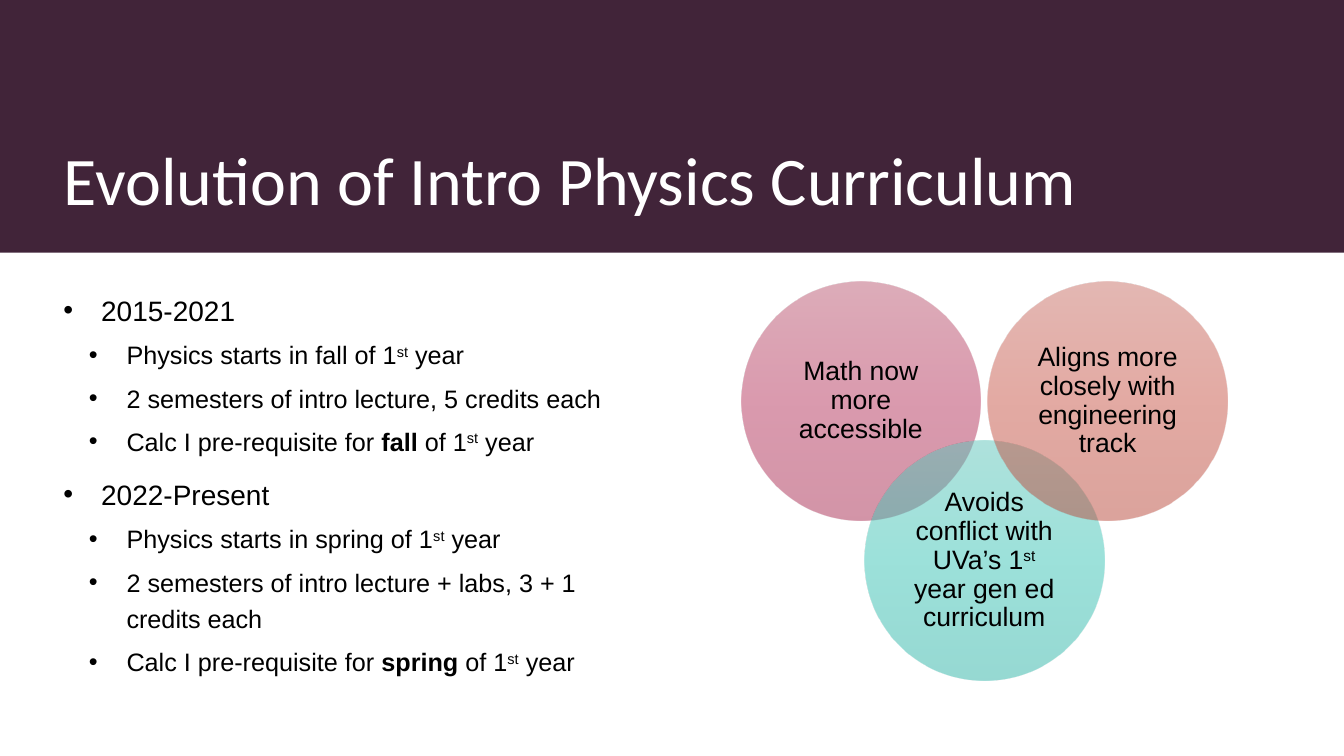
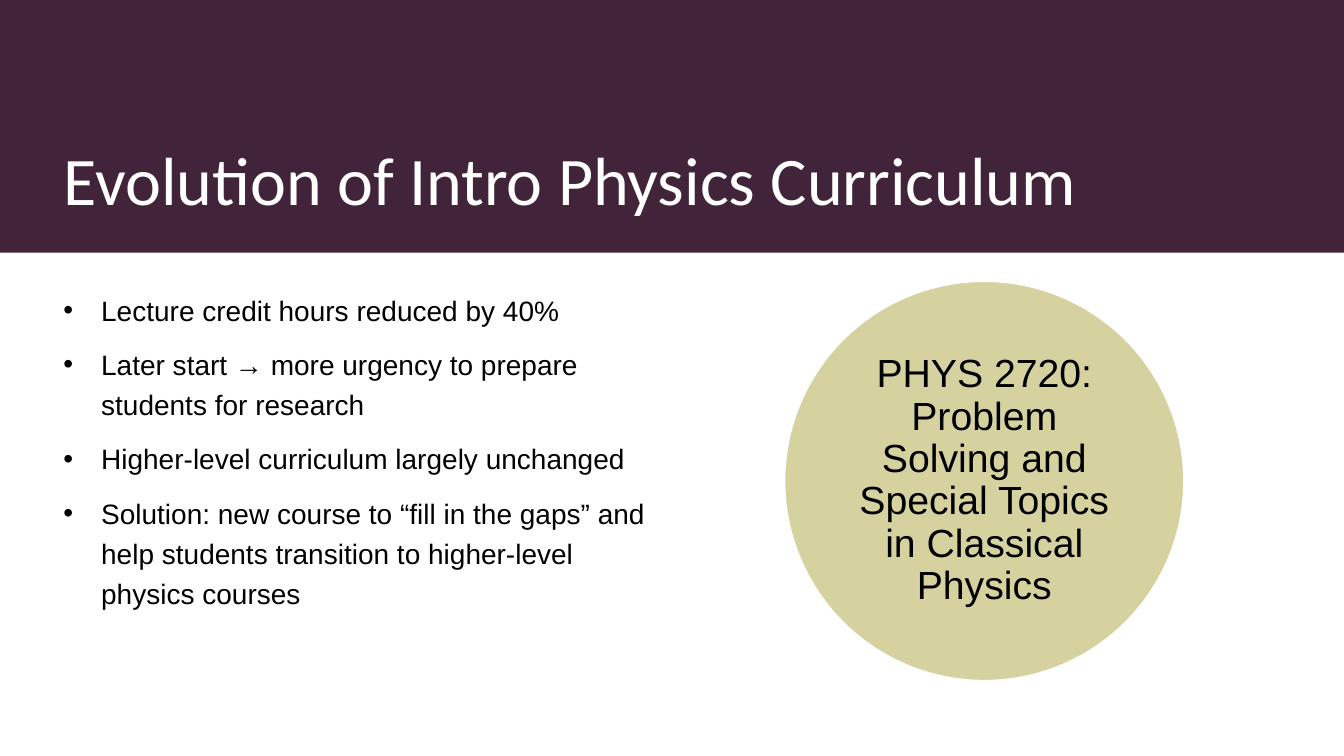
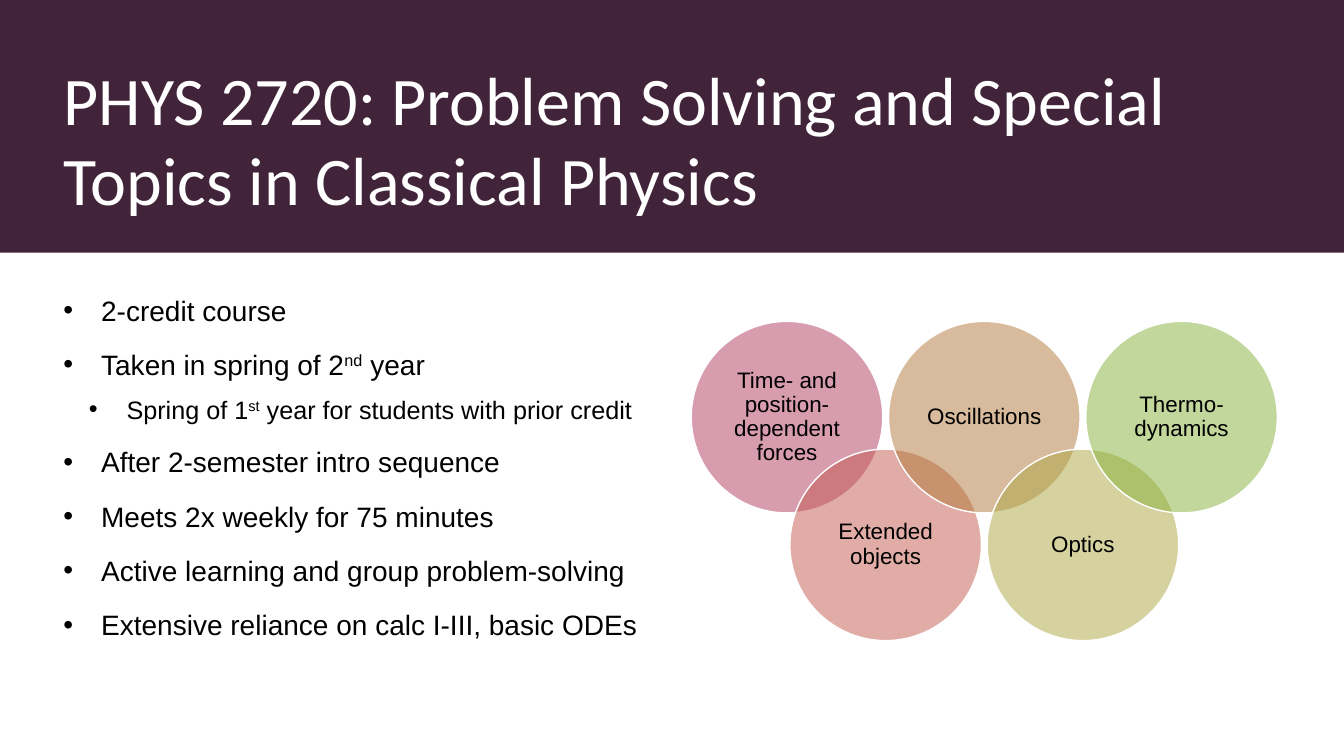
from dataclasses import dataclass

from lxml import etree
from pptx import Presentation
from pptx.dml.color import RGBColor
from pptx.enum.shapes import MSO_SHAPE
from pptx.enum.text import MSO_ANCHOR, MSO_AUTO_SIZE, PP_ALIGN
from pptx.oxml.ns import qn
from pptx.util import Cm, Pt

RECT, OVAL = MSO_SHAPE.RECTANGLE, MSO_SHAPE.OVAL
LOW, MID, TOP = MSO_ANCHOR.BOTTOM, MSO_ANCHOR.MIDDLE, MSO_ANCHOR.TOP
LEFT, CENTER = PP_ALIGN.LEFT, PP_ALIGN.CENTER
FIXED = MSO_AUTO_SIZE.NONE
TITLE_ONLY = 5


@dataclass(frozen=True)
class Theme:
    band: str = "412439"
    ink: str = "000000"
    paper: str = "FFFFFF"
    head: str = "Calibri"
    body: str = "Arial"
    title: float = 48.6
    sizes: tuple = (20, 18)  # by bullet level
    gaps: tuple = (10, 5)
    alpha: int = 50
    rose: str = "B13B5F"
    brick: str = "C35A4D"
    tan: str = "B1793B"
    olive: str = "ACA643"
    lime: str = "87B13B"
    # Shades from top to bottom
    roses: tuple = ("BC5A73", "B7355D", "A82A50")
    teals: tuple = ("5EC6BB", "39C5B7", "2DB4A7")
    bricks: tuple = ("CA7067", "C95547", "B94739")


THEME = Theme()

# Boxes in cm: left, top, width, height
PAGE = (0, 0, 33.87, 19.05)
BAND = (0, 0, 33.87, 6.37)
TITLE = (1.35, 1.02, 31.29, 4.7)
BODY = (1.35, 7.09, 15.6, 10.06)
RINGS = (17.42, 7.09, 14.77, 10.06)

HANG = 0.95
INDENT = (0.95, 1.59)
GAP = 0.03  # between circles of one row, in diameters
DROP = 2 / 3  # from the upper row to the lower, in diameters


def assign(item, values):
    for name, value in values.items():
        setattr(item, name, value)


def place(shape, box):
    names = ("left", "top", "width", "height")
    assign(shape, {n: Cm(v) for n, v in zip(names, box)})


def frame(shape, anchor):
    text = shape.text_frame
    assign(text, {"word_wrap": True, "auto_size": FIXED,
                  "vertical_anchor": anchor})
    return text


def write(para, text, font, size, color, form):
    """Split text at |; a part led by ^ is raised, one led by * is bold."""
    assign(para, form)
    for part in text.split("|"):
        run = para.add_run()
        run.text = part.lstrip("^*")
        assign(run.font, {"name": font, "size": Pt(size),
                          "bold": part.startswith("*")})
        run.font.color.rgb = RGBColor.from_string(color)
        if part.startswith("^"):
            run.font._element.set("baseline", "30000")


def fade(node):
    alpha = etree.SubElement(node, qn("a:alpha"))
    alpha.set("val", str(THEME.alpha * 1000))


def paint(shape, fill):
    """A single colour gets a white rim; a tuple is a gradient without one."""
    props = shape.element.spPr
    if isinstance(fill, str):
        shape.fill.solid()
        shape.fill.fore_color.rgb = RGBColor.from_string(fill)
        fade(props.find(qn("a:solidFill")).find(qn("a:srgbClr")))
        shape.line.color.rgb = RGBColor.from_string(THEME.paper)
        shape.line.width = Pt(1)
        return
    shape.fill.gradient()
    shape.fill.gradient_angle = 270
    stops = props.find(qn("a:gradFill")).find(qn("a:gsLst"))
    for old in list(stops):
        stops.remove(old)
    for i, shade in enumerate(fill):
        stop = etree.SubElement(stops, qn("a:gs"))
        stop.set("pos", str(100000 * i // (len(fill) - 1)))
        color = etree.SubElement(stop, qn("a:srgbClr"))
        color.set("val", shade)
        fade(color)
    shape.line.fill.background()


def add_band(slide, box):
    """Draw the band and hand it to the layout, so all slides share it."""
    band = slide.shapes.add_shape(RECT, *map(Cm, box))
    band.shadow.inherit = False
    band.fill.solid()
    band.fill.fore_color.rgb = RGBColor.from_string(THEME.band)
    band.line.fill.background()
    slide.slide_layout.shapes.element.insert(2, band.element)


def add_title(slide, box, text):
    title = slide.shapes.title
    place(title, box)
    para = frame(title, LOW).paragraphs[0]
    write(para, text, THEME.head, THEME.title, THEME.paper,
          {"alignment": LEFT, "line_spacing": 0.98})


def add_list(slide, box, items):
    text = frame(slide.shapes.add_textbox(*map(Cm, box)), TOP)
    for i, (level, line) in enumerate(items):
        para = text.add_paragraph() if i else text.paragraphs[0]
        write(para, line, THEME.body, THEME.sizes[level], THEME.ink,
              {"level": level, "line_spacing": 1.2,
               "space_before": Pt(THEME.gaps[level])})
        props = para._p.get_or_add_pPr()
        props.set("marL", str(Cm(INDENT[level])))
        props.set("indent", str(-Cm(HANG)))
        etree.SubElement(props, qn("a:buFont")).set("typeface", THEME.body)
        etree.SubElement(props, qn("a:buChar")).set("char", "•")


def add_rings(slide, box, size, rings):
    """Zigzag of overlapping circles, as large as fits, centred in the box."""
    left, top, width, height = box
    step = (1 + GAP) / 2
    wide = 1 + step * (len(rings) - 1)
    high = 1 + (DROP if len(rings) > 1 else 0)
    side = min(width / wide, height / high)
    left += (width - side * wide) / 2
    top += (height - side * high) / 2
    for i, (text, fill) in enumerate(rings):
        spot = (left + i * step * side, top + i % 2 * DROP * side, side, side)
        ring = slide.shapes.add_shape(OVAL, *map(Cm, spot))
        ring.shadow.inherit = False
        paint(ring, fill)
        label = frame(ring, MID)
        edges = ("left", "right", "top", "bottom")
        assign(label, {f"margin_{e}": Pt(size * 0.3) for e in edges})
        write(label.paragraphs[0], text, THEME.body, size, THEME.ink,
              {"alignment": CENTER, "line_spacing": 0.9})


# Each slide: title, list width, list items, circle text size, circles
SLIDES = [
    ("Evolution of Intro Physics Curriculum", 14.78, [
        (0, "2015-2021"),
        (1, "Physics starts in fall of 1|^st| year"),
        (1, "2 semesters of intro lecture, 5 credits each"),
        (1, "Calc I pre-requisite for |*fall| of 1|^st| year"),
        (0, "2022-Present"),
        (1, "Physics starts in spring of 1|^st| year"),
        (1, "2 semesters of intro lecture + labs, 3 + 1 credits each"),
        (1, "Calc I pre-requisite for |*spring| of 1|^st| year"),
    ], 19, [
        ("Math now more accessible", THEME.roses),
        ("Avoids conflict with UVa’s 1|^st| year gen ed curriculum",
         THEME.teals),
        ("Aligns more closely with engineering track", THEME.bricks),
    ]),
    ("Evolution of Intro Physics Curriculum", 15.29, [
        (0, "Lecture credit hours reduced by 40%"),
        (0, "Later start → more urgency to prepare students for research"),
        (0, "Higher-level curriculum largely unchanged"),
        (0, "Solution: new course to “fill in the gaps” and help students "
            "transition to higher-level physics courses"),
    ], 28, [
        ("PHYS 2720: Problem Solving and Special Topics in Classical Physics",
         THEME.olive),
    ]),
    ("PHYS 2720: Problem Solving and Special Topics in Classical Physics",
     15.6, [
         (0, "2-credit course"),
         (0, "Taken in spring of 2|^nd| year"),
         (1, "Spring of 1|^st| year for students with prior credit"),
         (0, "After 2-semester intro sequence"),
         (0, "Meets 2x weekly for 75 minutes"),
         (0, "Active learning and group problem-solving"),
         (0, "Extensive reliance on calc I-III, basic ODEs"),
     ], 16, [
         ("Time- and position-dependent forces", THEME.rose),
         ("Extended objects", THEME.brick),
         ("Oscillations", THEME.tan),
         ("Optics", THEME.olive),
         ("Thermo-dynamics", THEME.lime),
     ]),
]


def main():
    deck = Presentation()
    deck.slide_width, deck.slide_height = Cm(PAGE[2]), Cm(PAGE[3])
    layout = deck.slide_layouts[TITLE_ONLY]
    for i, (title, width, items, size, rings) in enumerate(SLIDES):
        slide = deck.slides.add_slide(layout)
        if i == 0:
            add_band(slide, BAND)
        add_title(slide, TITLE, title)
        left, top, _, height = BODY
        add_list(slide, (left, top, width, height), items)
        add_rings(slide, RINGS, size, rings)
    deck.save("out.pptx")


if __name__ == "__main__":
    main()
